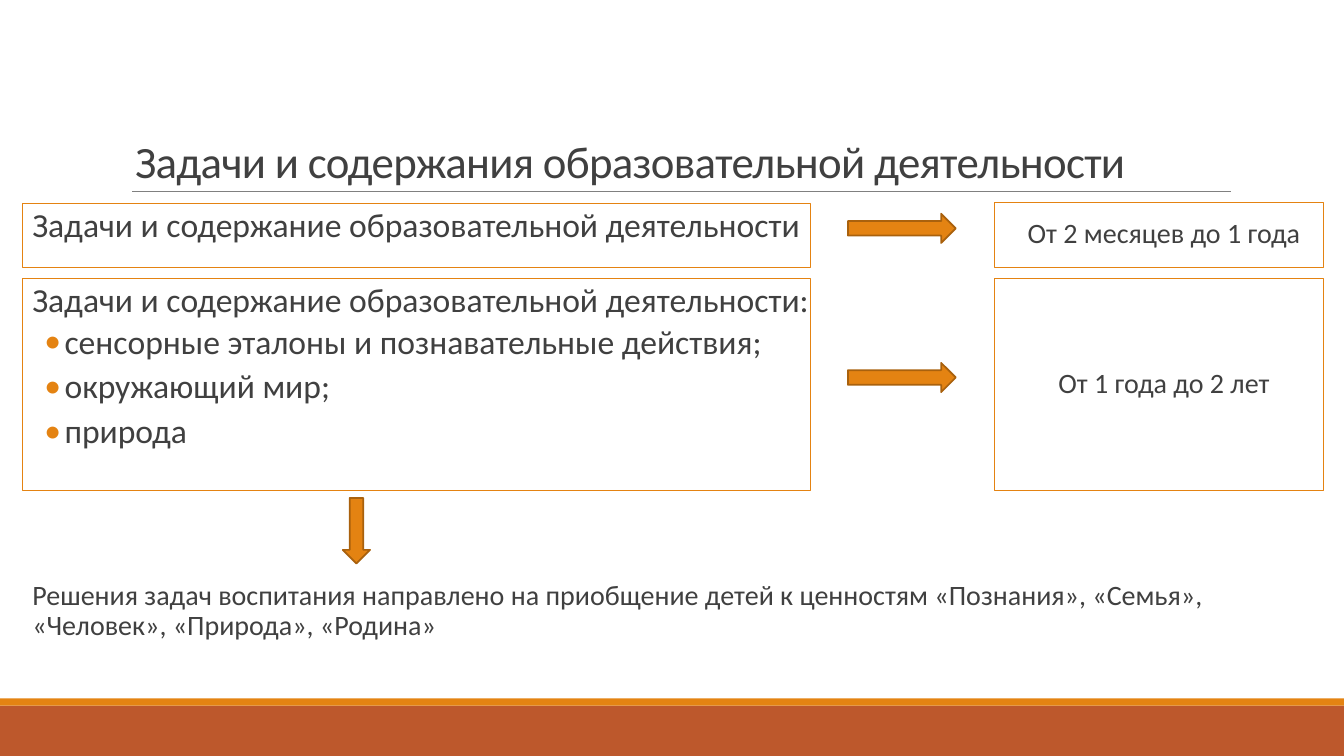
"""Builds a slide linking the educational tasks to the age groups of children."""
from dataclasses import dataclass

from lxml import etree
from pptx import Presentation
from pptx.dml.color import RGBColor
from pptx.enum import shapes, text
from pptx.oxml.ns import qn
from pptx.util import Inches, Pt

ORANGE, RUST, BROWN = "E48312", "BD582C", "A9610D"
GREY, INK = "808080", "404040"
FONT = "Calibri"
LEFT_X, LEFT_W = 0.22, 7.82
RIGHT_X, RIGHT_W = 9.86, 3.27
LIST_Y, LIST_H = 2.76, 2.11
ARROW_X, ARROW_W, ARROW_H = 8.41, 1.07, 0.29


@dataclass(frozen=True)
class Box:
    at: tuple
    lines: tuple
    size: int
    centred: bool = False
    framed: bool = True


@dataclass(frozen=True)
class Block:
    kind: int
    at: tuple
    fill: str
    line: str = ""
    rotation: int = 0


BOXES = {
    1: Box((LEFT_X, 2.02, LEFT_W, 0.63),
           ("Задачи и содержание образовательной деятельности",), 24),
    2: Box((LEFT_X, LIST_Y, LEFT_W, LIST_H),
           ("Задачи и содержание образовательной деятельности:",
            "сенсорные эталоны и познавательные действия;",
            "окружающий мир;", "природа"), 24),
    3: Box((RIGHT_X, 2.01, RIGHT_W, 0.64),
           ("От 2 месяцев до 1 года",), 20, centred=True),
    4: Box((RIGHT_X, LIST_Y, RIGHT_W, LIST_H),
           ("От 1 года до 2 лет",), 20, centred=True),
}
VALUES = Box((LEFT_X, 5.72, 12.91, 0.97),
             ("Решения задач воспитания направлено на приобщение детей к ценностям "
              "«Познания», «Семья», «Человек», «Природа», «Родина»",), 20, framed=False)

RECT, ARROW = shapes.MSO_SHAPE.RECTANGLE, shapes.MSO_SHAPE.RIGHT_ARROW
BLOCKS = (
    Block(RECT, (0, 7, 13.33, 0.5), RUST),
    Block(RECT, (0, 6.93, 13.33, 0.07), ORANGE),
    Block(ARROW, (ARROW_X, 2.12, ARROW_W, ARROW_H), ORANGE, BROWN),
    Block(ARROW, (ARROW_X, 3.6, ARROW_W, ARROW_H), ORANGE, BROWN),
    Block(ARROW, (3.21, 5.13, 0.65, 0.27), ORANGE, BROWN, 90),
)


def color(value: str) -> RGBColor:
    """Turn a hex string into a colour."""
    return RGBColor.from_string(value)


def apply(target, formats: dict) -> None:
    """Set every attribute named in a dict of format values."""
    for name, value in formats.items():
        setattr(target, name, value)


def place(sp, at: tuple) -> None:
    """Move and size a shape, in inches."""
    names = ("left", "top", "width", "height")
    apply(sp, dict(zip(names, map(Inches, at))))


def add_bullet(p, char: str, margin: float, indent: float) -> None:
    """Give a paragraph an orange bullet with a hanging indent."""
    ppr = p._p.get_or_add_pPr()
    ppr.set("marL", str(Inches(margin)))
    ppr.set("indent", str(Inches(indent)))
    clr = etree.SubElement(ppr, qn("a:buClr"))
    etree.SubElement(clr, qn("a:srgbClr"), val=ORANGE)
    etree.SubElement(ppr, qn("a:buFont"), typeface=FONT)
    etree.SubElement(ppr, qn("a:buChar"), char=char)


def format_font(font, size: int) -> None:
    """Apply the slide's typeface and text colour."""
    apply(font, {"name": FONT, "size": Pt(size), "bold": False})
    font.color.rgb = color(INK)


def fill_box(sp, box: Box) -> None:
    """Place a text box and write a heading line with its bulleted items."""
    place(sp, box.at)
    if box.framed:
        sp.line.color.rgb = color(ORANGE)
        sp.line.width = Pt(0.75)
    tf = sp.text_frame
    anchor = text.MSO_ANCHOR.MIDDLE if box.centred else text.MSO_ANCHOR.TOP
    apply(tf, {"word_wrap": True, "auto_size": text.MSO_AUTO_SIZE.NONE,
               "vertical_anchor": anchor,
               "margin_left": 0, "margin_right": 0,
               "margin_top": Inches(0.05), "margin_bottom": Inches(0.05)})
    align = text.PP_ALIGN.CENTER if box.centred else text.PP_ALIGN.LEFT
    for i, line in enumerate(box.lines):
        p = tf.add_paragraph() if i else tf.paragraphs[0]
        p.add_run().text = line
        if i:
            p.level = 1
            add_bullet(p, "•", 0.42, -0.2)
        else:
            add_bullet(p, " ", 0.1, -0.1)
        apply(p, {"alignment": align, "line_spacing": 0.9,
                  "space_before": Pt(2 if i else 0),
                  "space_after": Pt(4 if i else 2)})
        format_font(p.runs[0].font, box.size)


def add_title(s) -> None:
    """Fill the title placeholder and draw the rule under it."""
    sp = s.shapes.title
    place(sp, (1.24, 0.6, 11, 1.31))
    tf = sp.text_frame
    apply(tf, {"word_wrap": True, "auto_size": text.MSO_AUTO_SIZE.NONE,
               "vertical_anchor": text.MSO_ANCHOR.BOTTOM})
    p = tf.paragraphs[0]
    apply(p, {"alignment": text.PP_ALIGN.LEFT, "line_spacing": 0.85})
    r = p.add_run()
    r.text = "Задачи и содержания образовательной деятельности"
    format_font(r.font, 32)
    r._r.get_or_add_rPr().set("spc", "-50")
    ends = map(Inches, (1.31, 1.9, 12.21, 1.9))
    rule = s.shapes.add_connector(shapes.MSO_CONNECTOR.STRAIGHT, *ends)
    rule.line.color.rgb = color(GREY)
    rule.line.width = Pt(0.5)
    etree.SubElement(rule._element.spPr, qn("a:effectLst"))


def add_block(s, block: Block) -> None:
    """Draw a filled bar or arrow."""
    sp = s.shapes.add_shape(block.kind, *map(Inches, block.at))
    sp.shadow.inherit = False
    sp.rotation = block.rotation
    sp.fill.solid()
    sp.fill.fore_color.rgb = color(block.fill)
    if block.line:
        sp.line.color.rgb = color(block.line)
        sp.line.width = Pt(1.25)
    else:
        sp.line.fill.background()


def main() -> None:
    """Build the slide and save it."""
    prs = Presentation()
    apply(prs, {"slide_width": Inches(13.33), "slide_height": Inches(7.5)})
    s = prs.slides.add_slide(prs.slide_layouts.get_by_name("Comparison"))
    add_title(s)
    for idx, box in BOXES.items():
        fill_box(s.placeholders[idx], box)
    fill_box(s.shapes.add_textbox(*map(Inches, VALUES.at)), VALUES)
    for block in BLOCKS:
        add_block(s, block)
    prs.save("out.pptx")


if __name__ == "__main__":
    main()
